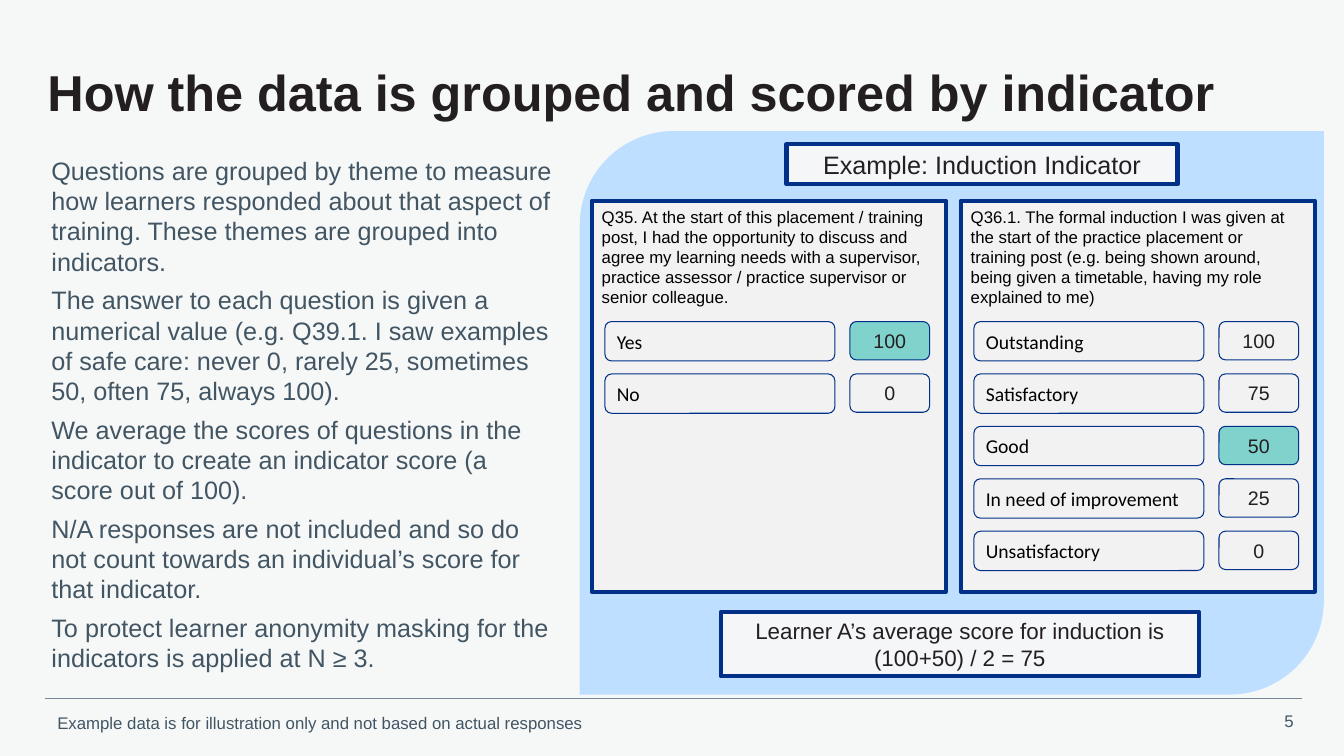
from pptx import Presentation
from pptx.dml.color import RGBColor
from pptx.enum.shapes import MSO_CONNECTOR, MSO_SHAPE
from pptx.enum.text import MSO_ANCHOR, PP_ALIGN
from pptx.oxml.ns import qn
from pptx.util import Inches, Pt
from lxml.etree import SubElement

PAGE = RGBColor(0xF6, 0xF8, 0xF8)
SKY = RGBColor(0xBE, 0xDF, 0xFF)
PANEL = RGBColor(0xF2, 0xF2, 0xF2)
PALE = RGBColor(0xF4, 0xF6, 0xF8)
TEAL = RGBColor(0x80, 0xD2, 0xCC)
NAVY = RGBColor(0x00, 0x30, 0x87)
SLATE = RGBColor(0x42, 0x55, 0x63)
RULE = RGBColor(0x76, 0x86, 0x92)
INK = RGBColor(0x23, 0x1F, 0x20)
BLACK = RGBColor(0x00, 0x00, 0x00)

TITLE = "How the data is grouped and scored by indicator"
POINTS = [
    "Questions are grouped by theme to measure how learners responded about that aspect of training. "
    "These themes are grouped into indicators.",
    "The answer to each question is given a numerical value (e.g. Q39.1. I saw examples of safe care: "
    "never 0, rarely 25, sometimes 50, often 75, always 100).",
    "We average the scores of questions in the indicator to create an indicator score "
    "(a score out of 100).",
    "N/A responses are not included and so do not count towards an individual’s score for that indicator.",
    "To protect learner anonymity masking for the indicators is applied at N ≥ 3.",
]
HEADING = "Example: Induction Indicator"
RESULT = "Learner A’s average score for induction is (100+50) / 2 = 75"
NOTE = "Example data is for illustration only and not based on actual responses"
NUMBER = "5"
# Question, answers with their scores, and the answer that was chosen
QUESTIONS = [
    ("Q35. At the start of this placement / training post, I had the opportunity to discuss and agree "
     "my learning needs with a supervisor, practice assessor / practice supervisor or senior colleague.",
     [("Yes", 100), ("No", 0)], "Yes"),
    ("Q36.1. The formal induction I was given at the start of the practice placement or training post "
     "(e.g. being shown around, being given a timetable, having my role explained to me)",
     [("Outstanding", 100), ("Satisfactory", 75), ("Good", 50),
      ("In need of improvement", 25), ("Unsatisfactory", 0)], "Good"),
]

LEFT, TOP, STEP = 5.87, 1.99, 3.66  # panel grid
WIDE, TALL = 3.51, 3.88
FIRST, ROW = 3.19, 0.52  # answer rows

deck = Presentation()
deck.slide_width, deck.slide_height = Inches(13.33), Inches(7.5)
slide = deck.slides.add_slide(deck.slide_layouts[5])
slide.background.fill.solid()
slide.background.fill.fore_color.rgb = PAGE


def put(para, text, size, color, align=PP_ALIGN.LEFT, face="Arial", bold=False):
    para.alignment = align
    run = para.add_run()
    run.text = text
    font = run.font
    font.name, font.size, font.bold = face, Pt(size), bold
    font.color.rgb = color


def clear(frame, anchor):
    """Remove the frame's insets, wrap it and set its anchor."""
    frame.margin_left = frame.margin_right = frame.margin_top = frame.margin_bottom = 0
    frame.word_wrap, frame.vertical_anchor = True, anchor


def shape(kind, at, fill=None, line=None, width=0.75):
    item = slide.shapes.add_shape(kind, *map(Inches, at))
    item.shadow.inherit = False
    if fill is None:
        item.fill.background()
    else:
        item.fill.solid()
        item.fill.fore_color.rgb = fill
    if line is None:
        item.line.fill.background()
    else:
        item.line.color.rgb, item.line.width = line, Pt(width)
    frame = item.text_frame
    frame.word_wrap, frame.vertical_anchor = True, MSO_ANCHOR.MIDDLE
    return item


def label(at, text, size, color, align=PP_ALIGN.LEFT):
    frame = slide.shapes.add_textbox(*map(Inches, at)).text_frame
    frame.word_wrap = True
    put(frame.paragraphs[0], text, size, color, align)


def banner(at, text, size):
    item = shape(MSO_SHAPE.RECTANGLE, at, PALE, NAVY, 3)
    put(item.text_frame.paragraphs[0], text, size, INK, PP_ALIGN.CENTER)


def panel(left, question, answers, chosen):
    shape(MSO_SHAPE.RECTANGLE, (left, TOP, WIDE, TALL), PANEL, NAVY, 3)
    label((left, TOP + 0.01, WIDE - 0.04, 1.11), question, 12, BLACK)
    for row, (answer, score) in enumerate(answers):
        top = FIRST + row * ROW
        box = shape(MSO_SHAPE.ROUNDED_RECTANGLE, (left + 0.13, top, 2.28, 0.39), None, NAVY)
        put(box.text_frame.paragraphs[0], answer, 14, BLACK, face="Calibri")
        fill = TEAL if answer == chosen else None
        box = shape(MSO_SHAPE.ROUNDED_RECTANGLE, (left + 2.56, top, 0.79, 0.38), fill, NAVY)
        put(box.text_frame.paragraphs[0], str(score), 14, INK, PP_ALIGN.CENTER)


title = slide.shapes.title
title.left, title.top, title.width, title.height = map(Inches, (0.47, 0.47, 12.47, 0.95))
clear(title.text_frame, MSO_ANCHOR.MIDDLE)
head = title.text_frame.paragraphs[0]
head.line_spacing = 0.9
put(head, TITLE, 36, INK, bold=True)

body = slide.shapes.add_textbox(*map(Inches, (0.51, 1.54, 4.99, 5.35))).text_frame
clear(body, MSO_ANCHOR.TOP)
for index, point in enumerate(POINTS):
    para = body.add_paragraph() if index else body.paragraphs[0]
    para.space_after = Pt(6)
    put(para, point, 18, SLATE)

shape(MSO_SHAPE.ROUND_2_DIAG_RECTANGLE, (5.75, 1.3, 7.38, 5.59), SKY)
for col, (question, answers, chosen) in enumerate(QUESTIONS):
    panel(LEFT + col * STEP, question, answers, chosen)
banner((7.8, 1.43, 3.88, 0.4), HEADING, 18)
banner((7.15, 6.07, 4.74, 0.64), RESULT, 16)

rule = slide.shapes.add_connector(
    MSO_CONNECTOR.STRAIGHT, *map(Inches, (0.45, 6.93, 12.91, 6.93)))
rule.line.color.rgb, rule.line.width = RULE, Pt(0.5)
SubElement(rule._element.spPr, qn("a:effectLst"))
label((0.47, 7.02, 7.56, 0.3), NOTE, 12, SLATE)
label((12.52, 7, 0.41, 0.3), NUMBER, 12, SLATE, PP_ALIGN.RIGHT)

deck.save("out.pptx")
